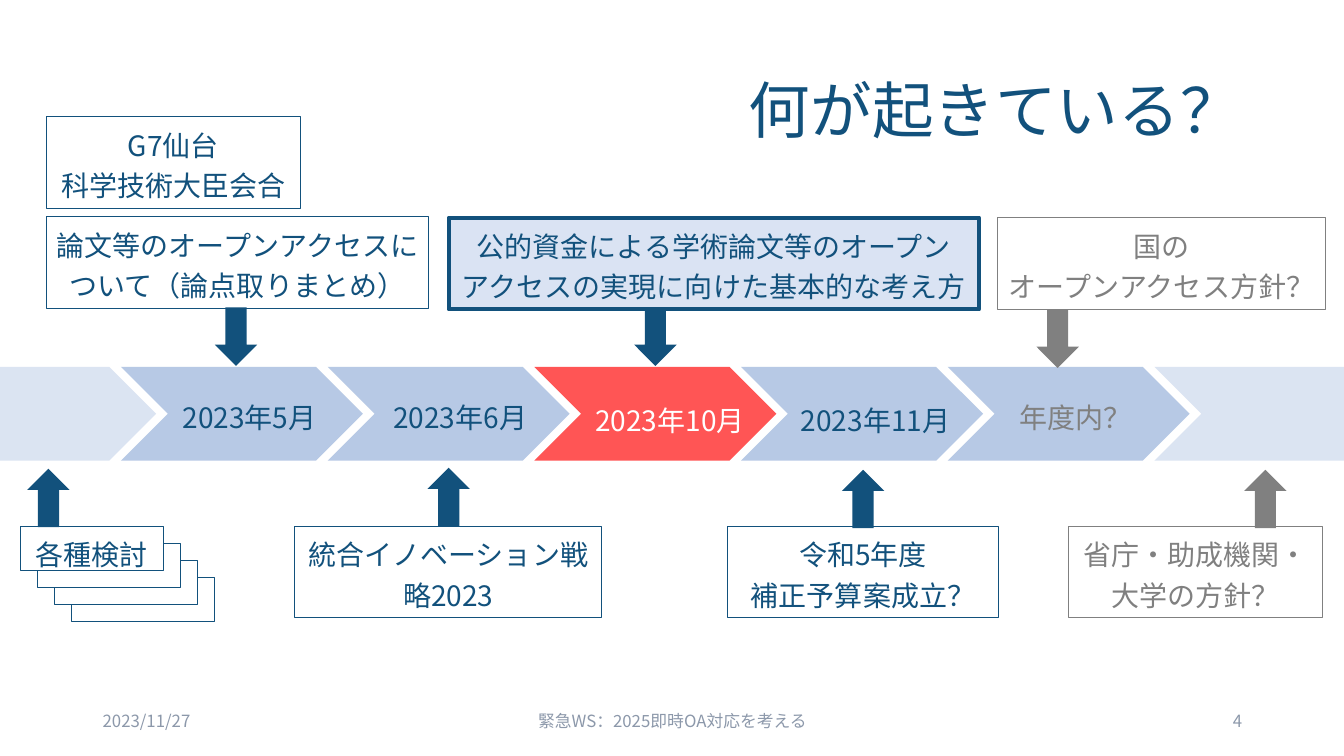
from pptx import Presentation
from pptx.dml.color import RGBColor
from pptx.enum.shapes import MSO_SHAPE as SHAPE
from pptx.enum.text import MSO_ANCHOR as ANCHOR, MSO_AUTO_SIZE as AUTO, PP_ALIGN as ALIGN
from pptx.oxml.ns import qn
from pptx.util import Inches, Pt
from lxml import etree

FONT = "Noto Sans CJK JP"
NAVY, GRAY, WHITE = "12517C", "808080", "FFFFFF"
BLUE, PALE, RED, MUTED = "B7C9E5", "DBE4F2", "FF5555", "8C98AA"

prs = Presentation()
prs.slide_width, prs.slide_height = Inches(13.33), Inches(7.5)
slide = prs.slides.add_slide(prs.slide_layouts[6])


def add_block(kind, place, fill=None, line=None, weight=0.75):
    block = slide.shapes.add_shape(kind, *map(Inches, place))
    block.shadow.inherit = False
    if fill:
        block.fill.solid()
        block.fill.fore_color.rgb = RGBColor.from_string(fill)
    else:
        block.fill.background()
    if line:
        block.line.color.rgb = RGBColor.from_string(line)
        block.line.width = Pt(weight)
    else:
        block.line.fill.background()
    return block


def write(holder, text, color, size=20, align=ALIGN.CENTER, spacing=1.2,
          before=6, anchor=ANCHOR.TOP, wrap=True, auto=AUTO.SHAPE_TO_FIT_TEXT):
    frame = holder.text_frame
    frame.word_wrap, frame.auto_size, frame.vertical_anchor = wrap, auto, anchor
    paragraph = frame.paragraphs[0]
    paragraph.text = text
    paragraph.alignment = align
    paragraph.line_spacing, paragraph.space_before = spacing, Pt(before)
    for run in paragraph.runs:
        run.font.size, run.font.name = Pt(size), FONT
        run.font.color.rgb = RGBColor.from_string(color)
        east_asian = etree.SubElement(run.font._element, qn("a:ea"))
        east_asian.set("typeface", FONT)


# Title and footer
for place, text, color, size, align, spacing in [
    ((0.92, 0.4, 11.5, 1.45), "何が起きている？", NAVY, 44, ALIGN.RIGHT, 0.9),
    ((0.92, 6.95, 3, 0.4), "2023/11/27", MUTED, 12, ALIGN.LEFT, 1.0),
    ((4.42, 6.95, 4.5, 0.4), "緊急WS：2025即時OA対応を考える", MUTED, 12, ALIGN.CENTER, 1.0),
    ((9.42, 6.95, 3, 0.4), "4", MUTED, 12, ALIGN.RIGHT, 1.0),
]:
    write(slide.shapes.add_textbox(*map(Inches, place)), text, color, size, align,
          spacing, before=0, anchor=ANCHOR.MIDDLE, auto=AUTO.NONE)

# Timeline chevrons
for step, fill in enumerate([PALE, BLUE, BLUE, RED, BLUE, BLUE, PALE]):
    add_block(SHAPE.CHEVRON, (-0.85 + 2.05 * step, 3.64, 2.4, 0.93), fill)

# Timeline dates
for left, top, width, height, date, color in [
    (1.56, 3.86, 1.83, 0.5, "2023年5月", NAVY),
    (3.65, 3.86, 1.83, 0.5, "2023年6月", NAVY),
    (5.64, 3.89, 2.01, 0.44, "2023年10月", WHITE),
    (7.7, 3.89, 1.97, 0.44, "2023年11月", NAVY),
    (10.01, 3.86, 1.32, 0.5, "年度内？", GRAY),
]:
    label = slide.shapes.add_textbox(*map(Inches, (left, top, width, height)))
    write(label, date, color, wrap=False)

# Stack of earlier reviews, rearmost first
for depth in (3, 2, 1, 0):
    review = add_block(SHAPE.RECTANGLE, (0.2 + 0.17 * depth, 5.22 + 0.17 * depth, 1.42, 0.44),
                       WHITE, NAVY)
write(review, "各種検討", NAVY)

# Event boxes
for left, top, width, text, color in [
    (0.46, 1.16, 2.52, "G7仙台\n科学技術大臣会合", NAVY),
    (0.46, 2.15, 3.79, "論文等のオープンアクセスについて（論点取りまとめ）", NAVY),
    (9.89, 2.16, 3.26, "国の\nオープンアクセス方針？", GRAY),
    (2.92, 5.22, 3.05, "統合イノベーション戦略2023", NAVY),
    (7.22, 5.22, 2.68, "令和5年度\n補正予算案成立？", NAVY),
    (10.6, 5.22, 2.52, "省庁・助成機関・\n大学の方針？", GRAY),
]:
    write(add_block(SHAPE.RECTANGLE, (left, top, width, 0.91), line=color), text, color)

# Highlighted event
policy = add_block(SHAPE.RECTANGLE, (4.45, 2.16, 5.26, 0.91), "DAE3F3", NAVY, 3)
write(policy, "公的資金による学術論文等のオープン\nアクセスの実現に向けた基本的な考え方", NAVY)

# Arrows from the events to the timeline
for left, top, turn, color in [
    (2.13, 3.05, 0, NAVY), (6.29, 3.05, 0, NAVY), (10.28, 3.07, 0, GRAY),
    (0.27, 4.65, 180, NAVY), (4.24, 4.64, 180, NAVY),
    (8.35, 4.66, 180, NAVY), (12.34, 4.66, 180, GRAY),
]:
    add_block(SHAPE.DOWN_ARROW, (left, top, 0.42, 0.58), color).rotation = turn

prs.save("out.pptx")
